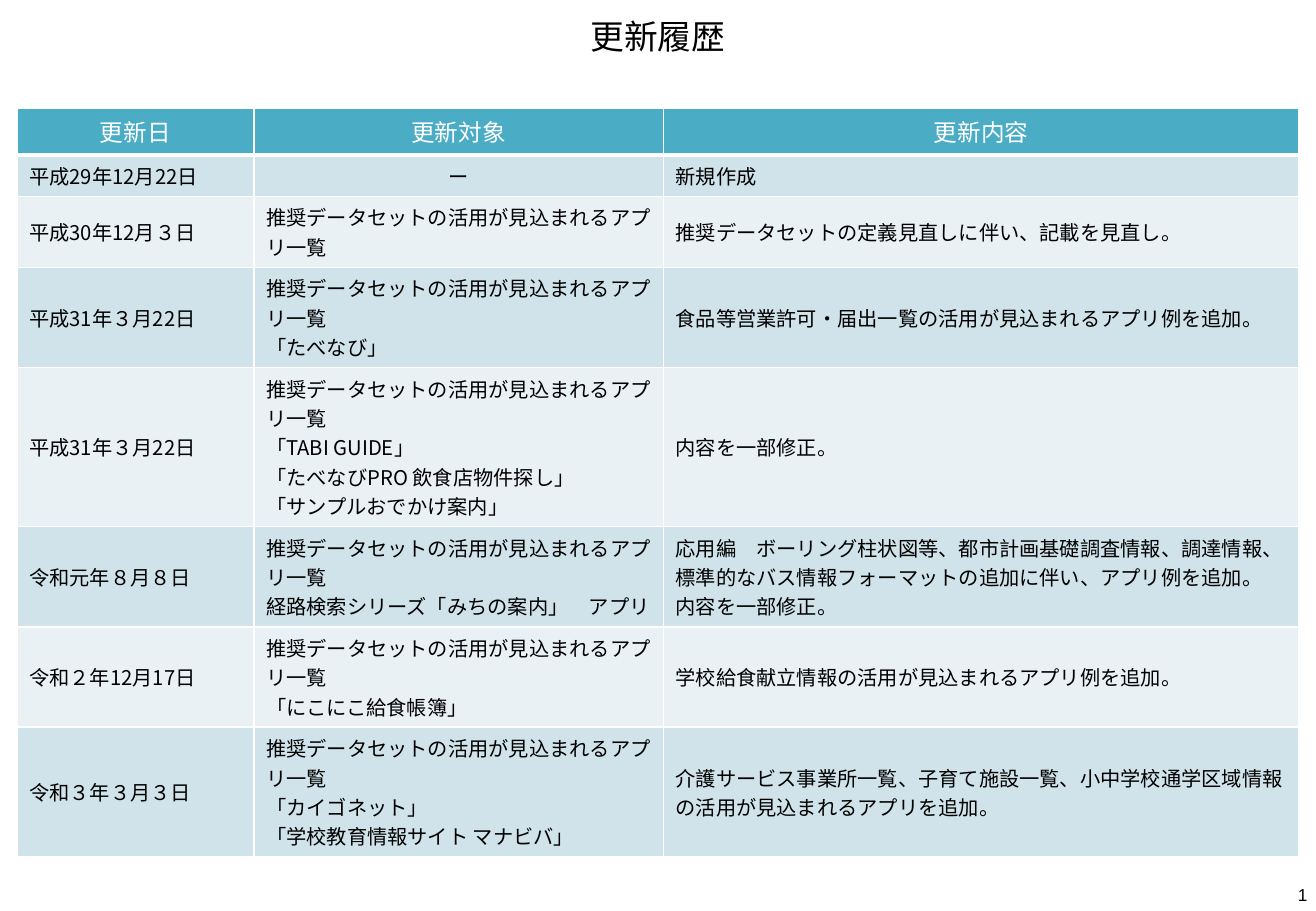
from dataclasses import dataclass

from lxml import etree
from pptx import Presentation
from pptx.dml.color import RGBColor
from pptx.enum.text import MSO_ANCHOR, PP_ALIGN
from pptx.oxml.ns import qn
from pptx.util import Inches, Pt

LEFT, CENTER, RIGHT = PP_ALIGN.LEFT, PP_ALIGN.CENTER, PP_ALIGN.RIGHT
MIDDLE, BOTTOM = MSO_ANCHOR.MIDDLE, MSO_ANCHOR.BOTTOM
TITLE_ONLY = 5

BODY_FONT, NUMBER_FONT = "Noto Sans CJK JP", "Arial"
BLACK, WHITE = "000000", "FFFFFF"
HEADER_FILL = "4BACC6"
BAND_FILLS = ("D0E3EA", "E9F1F5")

COLUMN_WIDTHS = (1.95, 3.37, 5.23)
HEADER_HEIGHT, LINE_HEIGHT, CELL_PADDING = 0.37, 0.24, 0.1
HEADINGS = ("更新日", "更新対象", "更新内容")
APP_LIST = "推奨データセットの活用が見込まれるアプリ一覧"


@dataclass(frozen=True)
class Revision:
    date: str
    target: str
    content: str
    lines: int
    target_alignment: PP_ALIGN = LEFT


REVISIONS = (
    Revision("平成29年12月22日", "ー", "新規作成", 1, CENTER),
    Revision("平成30年12月３日", APP_LIST, "推奨データセットの定義見直しに伴い、記載を見直し。", 2),
    Revision("平成31年３月22日", f"{APP_LIST}\n「たべなび」",
             "食品等営業許可・届出一覧の活用が見込まれるアプリ例を追加。", 3),
    Revision("平成31年３月22日",
             f"{APP_LIST}\n「TABI GUIDE」\n「たべなびPRO 飲食店物件探し」\n「サンプルおでかけ案内」",
             "内容を一部修正。", 5),
    Revision("令和元年８月８日", f"{APP_LIST}\n経路検索シリーズ「みちの案内」　アプリ",
             "応用編　ボーリング柱状図等、都市計画基礎調査情報、調達情報、"
             "標準的なバス情報フォーマットの追加に伴い、アプリ例を追加。\n内容を一部修正。", 3),
    Revision("令和２年12月17日", f"{APP_LIST}\n「にこにこ給食帳簿」",
             "学校給食献立情報の活用が見込まれるアプリ例を追加。", 3),
    Revision("令和３年３月３日", f"{APP_LIST}\n「カイゴネット」\n「学校教育情報サイト マナビバ」",
             "介護サービス事業所一覧、子育て施設一覧、小中学校通学区域情報"
             "の活用が見込まれるアプリを追加。", 4),
)


def color(value: str) -> RGBColor:
    return RGBColor.from_string(value)


def write_text(text_frame, text: str, size: float, font_color: str = BLACK,
               alignment: PP_ALIGN = LEFT, font_name: str = BODY_FONT) -> None:
    text_frame.text = text
    for paragraph in text_frame.paragraphs:
        paragraph.alignment = alignment
        for run in paragraph.runs:
            run.font.name = font_name
            run.font.size = Pt(size)
            run.font.bold = False
            run.font.color.rgb = color(font_color)
            east_asian = etree.SubElement(run.font._element, qn("a:ea"))
            east_asian.set("typeface", font_name)


def add_border(cell, side: str, width: float) -> None:
    properties = cell._tc.get_or_add_tcPr()
    line = etree.SubElement(properties, qn(f"a:ln{side}"), w=str(Pt(width)))
    fill = etree.SubElement(line, qn("a:solidFill"))
    etree.SubElement(fill, qn("a:srgbClr"), val=WHITE)


def fill_cell(cell, text: str, fill: str, size: float, font_color: str,
              alignment: PP_ALIGN, top: float = 1, bottom: float = 1) -> None:
    for side, width in (("L", 1), ("R", 1), ("T", top), ("B", bottom)):
        add_border(cell, side, width)
    cell.fill.solid()
    cell.fill.fore_color.rgb = color(fill)
    cell.vertical_anchor = MIDDLE
    write_text(cell.text_frame, text, size, font_color, alignment)


def add_title(slide) -> None:
    title = slide.shapes.title
    title.left, title.top = Inches(0.54), Inches(0.01)
    title.width, title.height = Inches(9.75), Inches(0.57)
    title.text_frame.vertical_anchor = MIDDLE
    write_text(title.text_frame, "更新履歴", 20, alignment=CENTER)


def add_history(slide) -> None:
    heights = [HEADER_HEIGHT] + [
        revision.lines * LINE_HEIGHT + CELL_PADDING for revision in REVISIONS]
    table = slide.shapes.add_table(
        len(heights), len(COLUMN_WIDTHS), Inches(0.14), Inches(0.89),
        Inches(sum(COLUMN_WIDTHS)), Inches(sum(heights))).table
    for column, width in zip(table.columns, COLUMN_WIDTHS):
        column.width = Inches(width)
    for row, height in zip(table.rows, heights):
        row.height = Inches(height)
    for cell, heading in zip(table.rows[0].cells, HEADINGS):
        fill_cell(cell, heading, HEADER_FILL, 14, WHITE, CENTER, bottom=3)
    for index, revision in enumerate(REVISIONS):
        texts = (revision.date, revision.target, revision.content)
        alignments = (LEFT, revision.target_alignment, LEFT)
        top = 3 if index == 0 else 1
        for cell, text, alignment in zip(table.rows[index + 1].cells, texts, alignments):
            fill_cell(cell, text, BAND_FILLS[index % 2], 12, BLACK, alignment, top=top)


def add_page_number(slide) -> None:
    text_frame = slide.shapes.add_textbox(
        Inches(8.3), Inches(7.19), Inches(2.53), Inches(0.3)).text_frame
    text_frame.word_wrap = True
    text_frame.vertical_anchor = BOTTOM
    text_frame.margin_left = text_frame.margin_right = Inches(0.07)
    text_frame.margin_top = text_frame.margin_bottom = Inches(0.04)
    write_text(text_frame, "1", 10.2, alignment=RIGHT, font_name=NUMBER_FONT)


def main() -> None:
    presentation = Presentation()
    presentation.slide_width, presentation.slide_height = Inches(10.83), Inches(7.5)
    slide = presentation.slides.add_slide(presentation.slide_layouts[TITLE_ONLY])
    add_title(slide)
    add_history(slide)
    add_page_number(slide)
    presentation.save("out.pptx")


if __name__ == "__main__":
    main()
